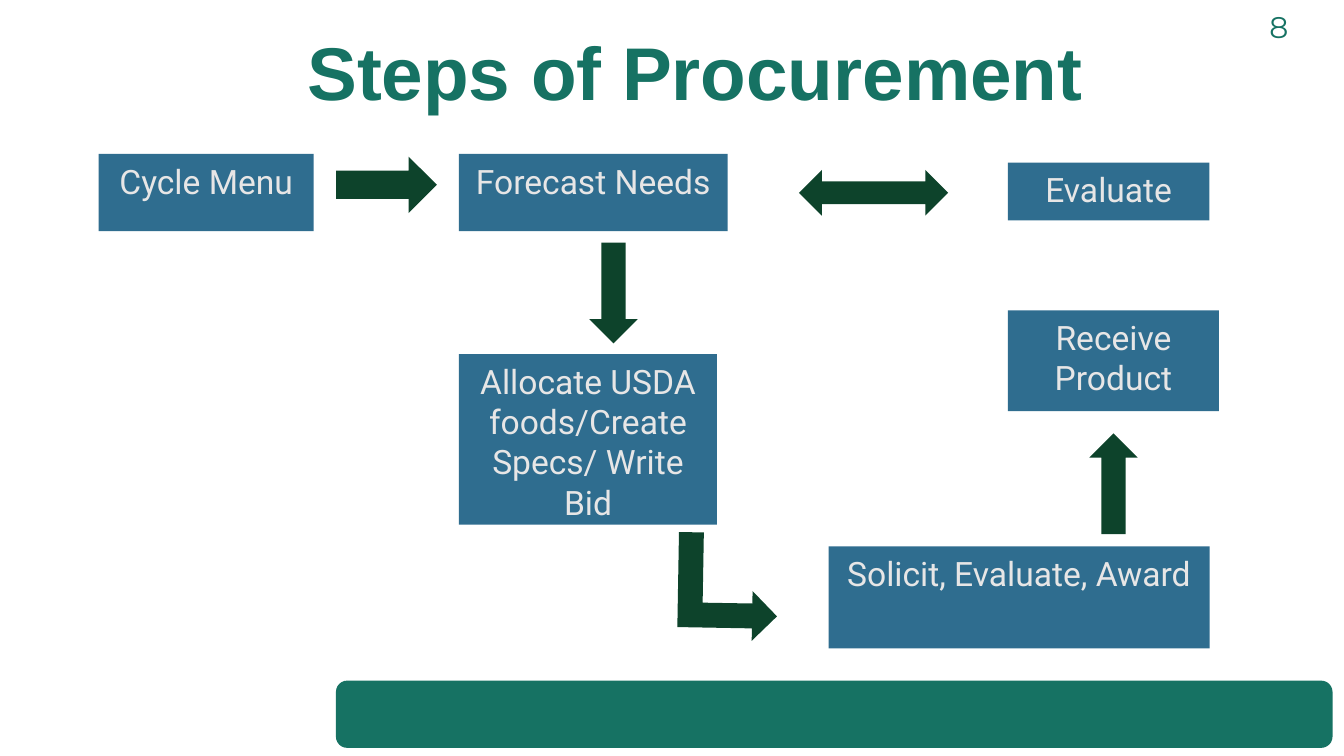
from pptx import Presentation
from pptx.dml.color import RGBColor
from pptx.enum.shapes import MSO_SHAPE
from pptx.enum.text import MSO_ANCHOR, MSO_AUTO_SIZE, PP_ALIGN
from pptx.util import Pt

PX = 4572  # EMU per px, 200 px to the inch
GREEN = RGBColor(0x16, 0x72, 0x63)
DARK_GREEN = RGBColor(0x0D, 0x43, 0x2B)
BLUE = RGBColor(0x2F, 0x6D, 0x8F)
WHITE = RGBColor(0xFF, 0xFF, 0xFF)
LIGHT_GREY = RGBColor(0xE7, 0xE6, 0xE6)

TITLE_FONT = {"name": "Arial", "size": Pt(40), "bold": True}
NUMBER_FONT = {"name": "Montserrat", "size": Pt(16), "bold": False}
STEP_FONT = {"name": "Roboto", "size": Pt(18), "bold": False}


def write(shape, text, font_format, color, anchor=MSO_ANCHOR.TOP):
    """Fill a shape with one centred paragraph."""
    frame = shape.text_frame
    frame.word_wrap = True
    frame.auto_size = MSO_AUTO_SIZE.NONE
    frame.vertical_anchor = anchor
    paragraph = frame.paragraphs[0]
    paragraph.alignment = PP_ALIGN.CENTER
    run = paragraph.add_run()
    run.text = text
    for attribute, value in font_format.items():
        setattr(run.font, attribute, value)
    run.font.color.rgb = color


def add_filled(kind, box, color):
    shape = slide.shapes.add_shape(kind, *(value * PX for value in box))
    shape.shadow.inherit = False
    shape.fill.solid()
    shape.fill.fore_color.rgb = color
    shape.line.fill.background()
    return shape


presentation = Presentation()
presentation.slide_width = 2000 * PX
presentation.slide_height = 1125 * PX
slide = presentation.slides.add_slide(presentation.slide_layouts[5])

title = slide.shapes.title
title.left, title.top, title.width, title.height = (
    value * PX for value in (117, 30, 1834, 100))
title.text_frame.margin_top = 8 * PX
write(title, "Steps of Procurement", TITLE_FONT, GREEN)

page_number = add_filled(MSO_SHAPE.RECTANGLE, (1853, 0, 100, 78), WHITE)
write(page_number, "8", NUMBER_FONT, GREEN, MSO_ANCHOR.MIDDLE)

add_filled(MSO_SHAPE.ROUNDED_RECTANGLE, (500, 1013, 1483, 100), GREEN)

steps = [
    ("Cycle Menu", (147, 229, 320, 115)),
    ("Forecast Needs", (683, 229, 400, 115)),
    ("Allocate USDA foods/Create Specs/ Write Bid", (683, 527, 384, 254)),
    ("Solicit, Evaluate, Award", (1233, 813, 567, 152)),
    ("Receive Product", (1500, 462, 314, 150)),
    ("Evaluate", (1500, 242, 300, 86)),
]
for text, box in steps:
    step = add_filled(MSO_SHAPE.RECTANGLE, box, BLUE)
    write(step, text, STEP_FONT, LIGHT_GREY)

arrows = [
    (MSO_SHAPE.RIGHT_ARROW, (500, 233, 150, 84), 0),
    (MSO_SHAPE.DOWN_ARROW, (877, 361, 72, 150), 0),
    (MSO_SHAPE.BENT_UP_ARROW, (1003, 799, 160, 148), 91),
    (MSO_SHAPE.UP_ARROW, (1621, 645, 72, 150), 0),
    (MSO_SHAPE.LEFT_RIGHT_ARROW, (1189, 253, 222, 68), 0),
]
for kind, box, rotation in arrows:
    arrow = add_filled(kind, box, DARK_GREEN)
    arrow.rotation = rotation

presentation.save("out.pptx")
